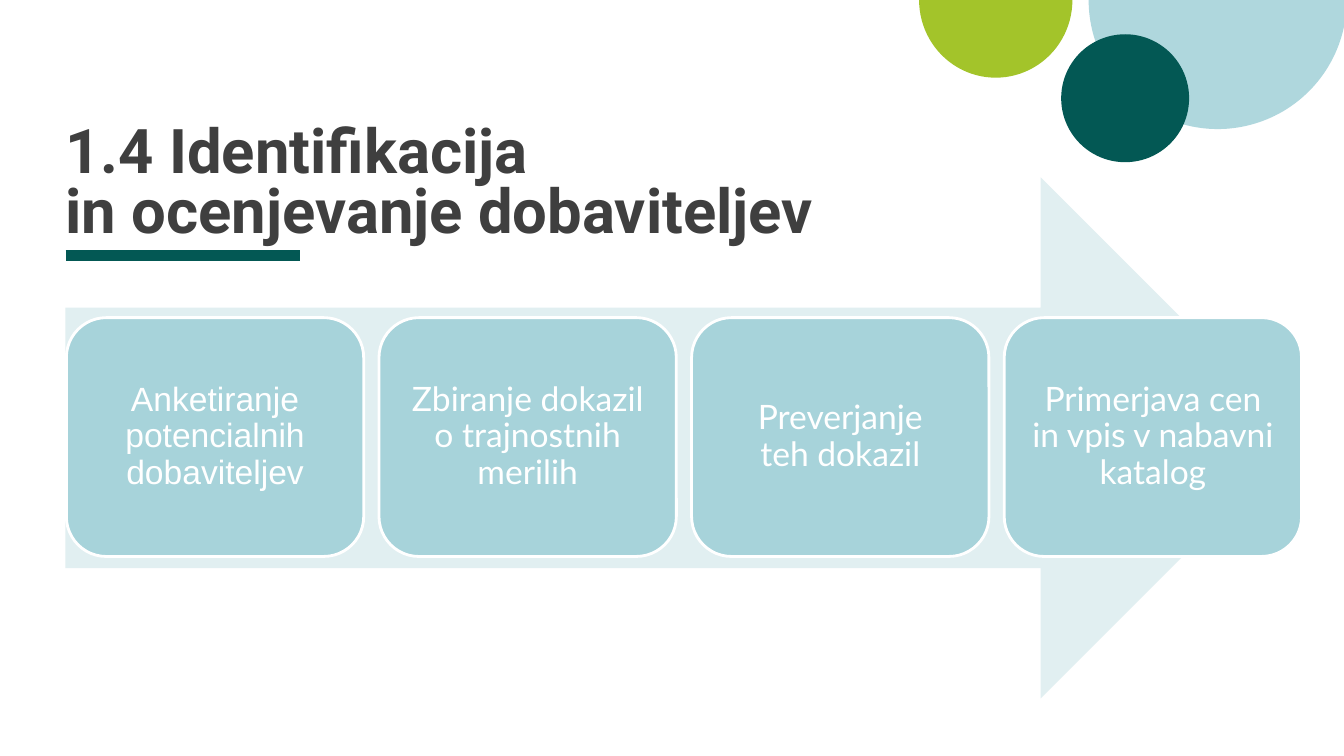
"""Build the slide on identifying and rating suppliers."""
from pptx import Presentation
from pptx.dml.color import RGBColor
from pptx.enum.shapes import MSO_CONNECTOR, MSO_SHAPE
from pptx.enum.text import MSO_ANCHOR, MSO_AUTO_SIZE, PP_ALIGN
from pptx.oxml.ns import qn
from pptx.util import Pt
from lxml import etree

PIE, OVAL = MSO_SHAPE.CHORD.PIE, MSO_SHAPE.OVAL
ARROW, CARD = MSO_SHAPE.RIGHT_ARROW, MSO_SHAPE.ROUNDED_RECTANGLE
STRAIGHT = MSO_CONNECTOR.STRAIGHT
BOTTOM, MIDDLE = MSO_ANCHOR.BOTTOM, MSO_ANCHOR.MIDDLE
LEFT, CENTER = PP_ALIGN.LEFT, PP_ALIGN.CENTER
NO_AUTOFIT = MSO_AUTO_SIZE.NONE

COLORS = {
    "sky": "AFD7DD", "lime": "A3C42A", "green": "035854",
    "arrow": "E1EFF1", "card": "A7D3DA", "white": "FFFFFF", "title": "3F3F3F",
}


def color(name):
    return RGBColor.from_string(COLORS[name])


def add_filled(kind, left, top, width, height, fill):
    shape = slide.shapes.add_shape(kind, Pt(left), Pt(top), Pt(width), Pt(height))
    shape.shadow.inherit = False
    shape.fill.solid()
    shape.fill.fore_color.rgb = color(fill)
    shape.line.fill.background()
    return shape


presentation = Presentation()
presentation.slide_width, presentation.slide_height = Pt(960), Pt(540)
slide = presentation.slides.add_slide(presentation.slide_layouts[5])

for left, top, width, height, fill in [
    (777.6, -92.2, 184.4, 184.4, "sky"),
    (656.5, -55.4, 109.5, 110.9, "lime"),
]:
    half_disc = add_filled(PIE, left, top, width, height, fill)
    half_disc.adjustments[0] = 0
    half_disc.adjustments[1] = 108
add_filled(OVAL, 758, 24.5, 91.4, 91.4, "green")

underline = slide.shapes.add_connector(STRAIGHT, Pt(46.8), Pt(182.4), Pt(214.4), Pt(182.4))
underline.line.color.rgb = color("green")
underline.line.width = Pt(8)
etree.SubElement(underline.element.spPr, qn("a:effectLst"))

add_filled(ARROW, 46.8, 126.7, 882.7, 372.2, "arrow")

title = slide.shapes.title
title.left, title.top, title.width, title.height = Pt(46.8), Pt(132.5), Pt(870.5), Pt(42.5)
frame = title.text_frame
frame.text = "1.4 Identifikacija\vin ocenjevanje dobaviteljev"
frame.word_wrap = True
frame.auto_size = NO_AUTOFIT
frame.vertical_anchor = BOTTOM
frame.margin_left = frame.margin_right = frame.margin_top = frame.margin_bottom = 0
paragraph = frame.paragraphs[0]
paragraph.alignment = LEFT
paragraph.line_spacing = 0.8
paragraph.font.name = "Roboto"
paragraph.font.size = Pt(44)
paragraph.font.bold = True
paragraph.font.color.rgb = color("title")

steps = [
    ("Anketiranje potencialnih dobaviteljev", "Arial"),
    ("Zbiranje dokazil o trajnostnih merilih", "Lato"),
    ("Preverjanje\nteh dokazil", "Lato"),
    ("Primerjava cen in vpis v nabavni katalog", "Lato"),
]
for index, (text, font_name) in enumerate(steps):
    card = add_filled(CARD, 47.4 + 223.3 * index, 226.9, 212.4, 170.6, "card")
    card.adjustments[0] = 0.167
    card.line.color.rgb = color("white")
    card.line.width = Pt(2)
    frame = card.text_frame
    frame.text = text
    frame.word_wrap = True
    frame.vertical_anchor = MIDDLE
    frame.margin_left = frame.margin_right = frame.margin_top = frame.margin_bottom = Pt(8.6)
    for paragraph in frame.paragraphs:
        paragraph.alignment = CENTER
        paragraph.line_spacing = 0.9
        paragraph.font.name = font_name
        paragraph.font.size = Pt(24)
        paragraph.font.color.rgb = color("white")

presentation.save("out.pptx")
